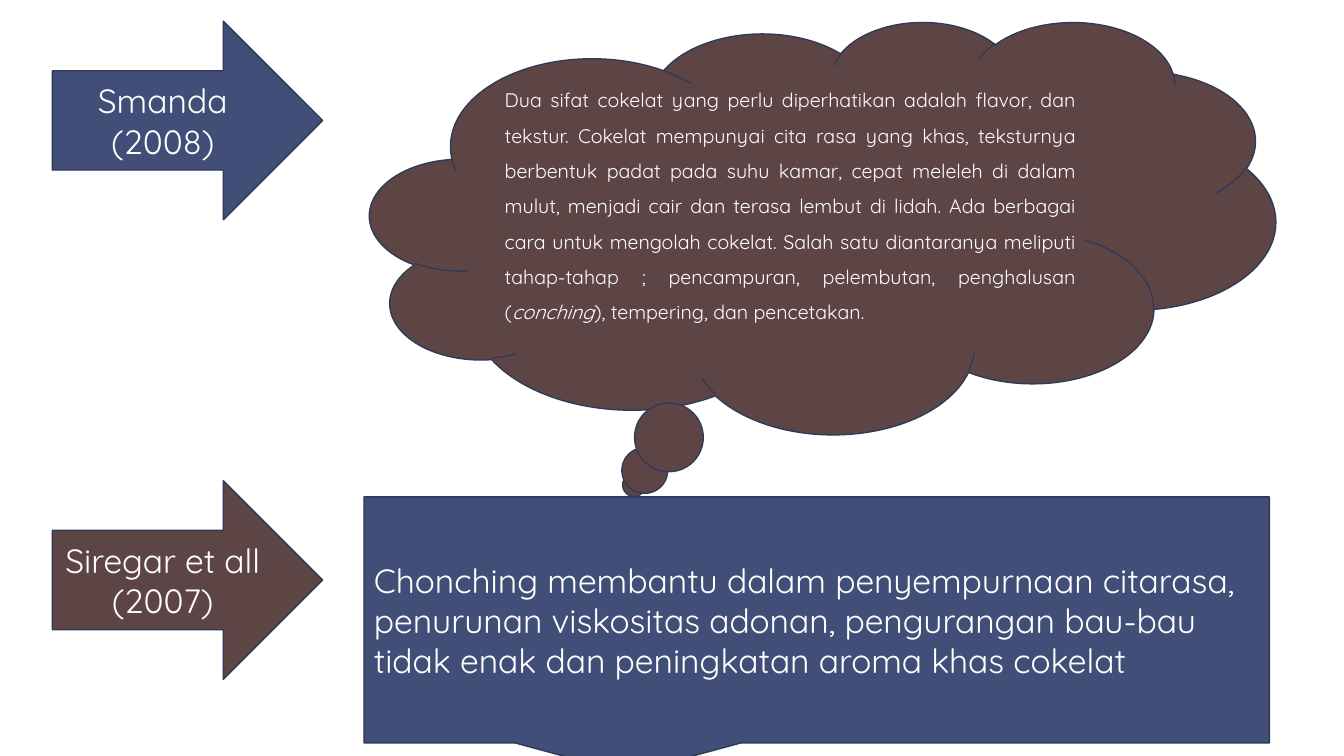
from pptx import Presentation
from pptx.dml.color import RGBColor
from pptx.enum.shapes import MSO_SHAPE
from pptx.enum.text import MSO_ANCHOR, PP_ALIGN
from pptx.util import Inches, Pt

BLUE = "414E77"
BROWN = "5E4545"
OUTLINE = "303A58"
WHITE = "FFFFFF"


def rgb(value):
    return RGBColor.from_string(value)


class SlideBuilder:
    font = "Quicksand"

    def __init__(self, prs):
        self.s = prs.slides.add_slide(prs.slide_layouts[6])
        self.s.background.fill.solid()
        self.s.background.fill.fore_color.rgb = rgb(WHITE)

    def shape(self, kind, left, top, width, height, fill):
        sp = self.s.shapes.add_shape(
            kind, Inches(left), Inches(top), Inches(width), Inches(height))
        sp.shadow.inherit = False
        sp.fill.solid()
        sp.fill.fore_color.rgb = rgb(fill)
        sp.line.color.rgb = rgb(OUTLINE)
        sp.line.width = Pt(1)
        return sp

    def text(self, sp, runs, size, align, spacing=1.0):
        tf = sp.text_frame
        tf.word_wrap = True
        tf.vertical_anchor = MSO_ANCHOR.MIDDLE
        p = tf.paragraphs[0]
        p.alignment = align
        p.line_spacing = spacing
        for content, italic in runs:
            r = p.add_run()
            r.text = content
            r.font.name = self.font
            r.font.size = Pt(size)
            r.font.italic = italic
            r.font.color.rgb = rgb(WHITE)

    def source_arrow(self, top, fill, label):
        sp = self.shape(MSO_SHAPE.RIGHT_ARROW, 0.52, top, 2.68, 1.97, fill)
        self.text(sp, [(label, False)], 24, PP_ALIGN.CENTER)

    def cloud(self, top, fill, runs):
        sp = self.shape(MSO_SHAPE.CLOUD_CALLOUT, 3.67, top, 8.98, 4.09, fill)
        sp.text_frame.margin_bottom = Inches(0.4)
        self.text(sp, runs, 14, PP_ALIGN.JUSTIFY, 1.5)

    def callout(self, top, fill, content):
        sp = self.shape(
            MSO_SHAPE.RECTANGULAR_CALLOUT, 3.61, top, 8.98, 2.44, fill)
        self.text(sp, [(content, False)], 24, PP_ALIGN.LEFT)


def main():
    prs = Presentation()
    prs.slide_width = Inches(13.33)
    prs.slide_height = Inches(7.5)
    slide = SlideBuilder(prs)

    slide.source_arrow(0.21, BLUE, "Smanda (2008)")
    slide.cloud(0.21, BROWN, [
        ("Dua sifat cokelat yang perlu diperhatikan adalah flavor, dan "
         "tekstur. Cokelat mempunyai cita rasa yang khas, teksturnya "
         "berbentuk padat pada suhu kamar, cepat meleleh di dalam mulut, "
         "menjadi cair dan terasa lembut di lidah. Ada berbagai cara untuk "
         "mengolah cokelat. Salah satu diantaranya meliputi tahap-tahap ; "
         "pencampuran, pelembutan, penghalusan (", False),
        ("conching", True),
        ("), tempering, dan pencetakan.", False),
    ])
    slide.source_arrow(4.77, BROWN, "Siregar et all (2007)")
    slide.callout(
        4.93, BLUE,
        "Chonching membantu dalam penyempurnaan citarasa, penurunan "
        "viskositas adonan, pengurangan bau-bau tidak enak dan peningkatan "
        "aroma khas cokelat")

    prs.save("out.pptx")


if __name__ == "__main__":
    main()
